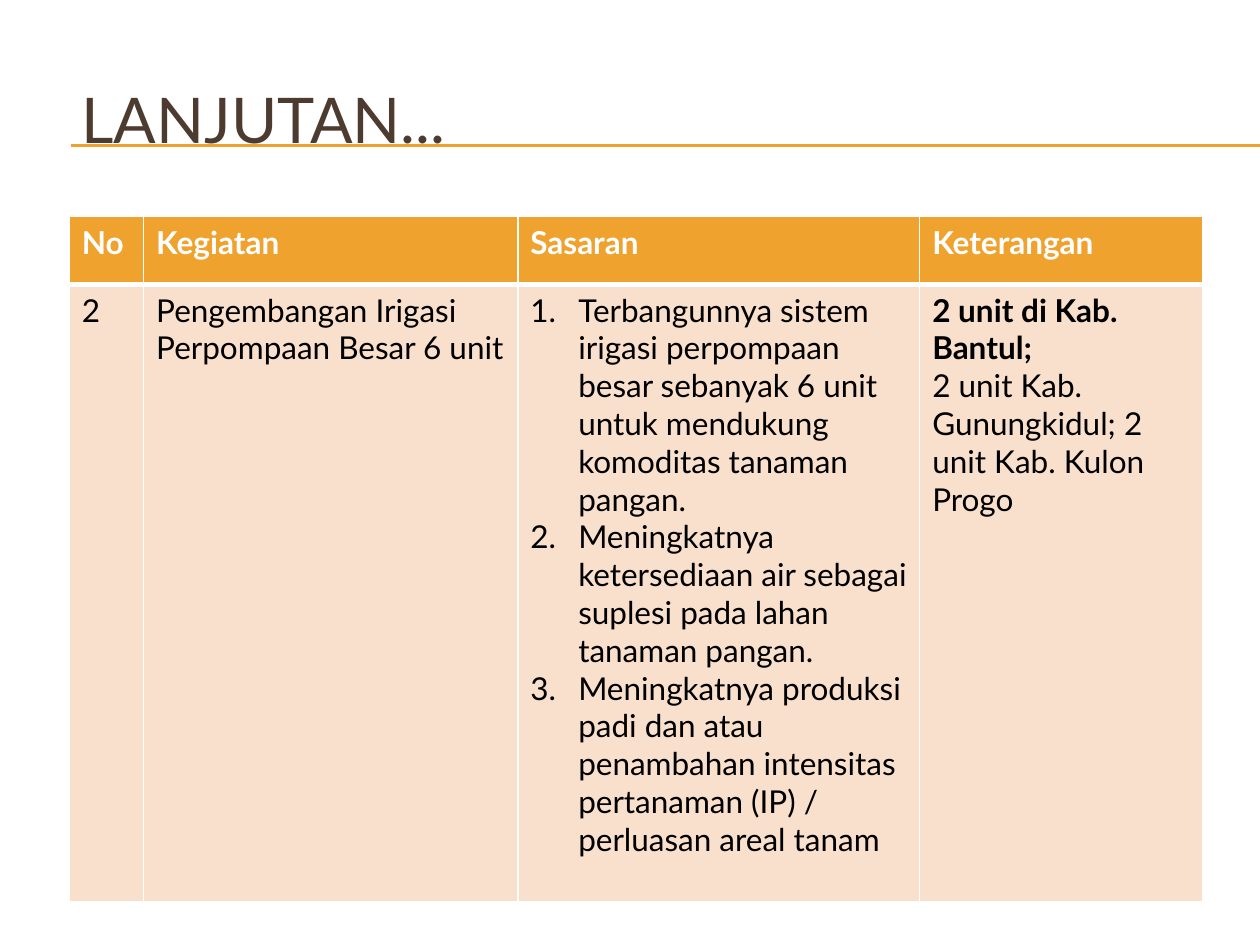
from lxml import etree
from pptx import Presentation
from pptx.dml.color import RGBColor
from pptx.enum.shapes import MSO_CONNECTOR
from pptx.enum.text import MSO_ANCHOR
from pptx.oxml.ns import qn
from pptx.util import Inches, Pt

STRAIGHT = MSO_CONNECTOR.STRAIGHT
MIDDLE = MSO_ANCHOR.MIDDLE

UNIT = Inches(0.01)
PAGE_COLUMNS, PAGE_ROWS = 1000, 750
COLORS = {"accent": "F0A22E", "title": "4E3B30", "band": "F9E0CD",
          "white": "FFFFFF", "black": "000000"}
FORMATS = {
    "title": {"size": Pt(36), "bold": False, "color": "title"},
    "header": {"size": Pt(18), "bold": True, "color": "white"},
    "body": {"size": Pt(18), "bold": False, "color": "black"},
    "strong": {"size": Pt(18), "bold": True, "color": "black"},
}
COLUMN_SPANS = (59, 297, 319, 225)
ROW_SPANS = (54, 490)
NUMBER_INDENT = Inches(0.38)
BORDERS = ("lnL", "lnR", "lnT", "lnB")

HEADERS = ("No", "Kegiatan", "Sasaran", "Keterangan")
TARGETS = (
    "Terbangunnya sistem irigasi perpompaan besar sebanyak 6 unit untuk mendukung komoditas tanaman pangan.",
    "Meningkatnya ketersediaan air sebagai suplesi pada lahan tanaman pangan.",
    "Meningkatnya produksi padi dan atau penambahan intensitas pertanaman (IP) / perluasan areal tanam",
)
TABLE_ROWS = (
    [[(header, "header")] for header in HEADERS],
    [
        [("2", "body")],
        [("Pengembangan Irigasi Perpompaan Besar 6 unit", "body")],
        [(target, "body") for target in TARGETS],
        [("2 unit di Kab. Bantul;", "strong"),
         ("2 unit Kab. Gunungkidul; 2 unit Kab. Kulon Progo", "body")],
    ],
)


def color(name):
    """Return the named colour of the palette."""
    return RGBColor.from_string(COLORS[name])


def place(box):
    """Turn grid columns and rows into slide lengths."""
    return [UNIT * value for value in box]


def write(frame, lines):
    """Write (text, format name) pairs as paragraphs."""
    for index, (text, style) in enumerate(lines):
        para = frame.add_paragraph() if index else frame.paragraphs[0]
        span = para.add_run()
        span.text = text
        span.font.name = "Lato"
        values = dict(FORMATS[style])
        span.font.color.rgb = color(values.pop("color"))
        for name, value in values.items():
            setattr(span.font, name, value)


def number(frame):
    """Number the paragraphs with a hanging indent."""
    for para in frame.paragraphs:
        properties = para._p.get_or_add_pPr()
        properties.set("marL", str(NUMBER_INDENT))
        properties.set("indent", str(-NUMBER_INDENT))
        etree.SubElement(properties, qn("a:buFont"), typeface="+mj-lt")
        etree.SubElement(properties, qn("a:buAutoNum"), type="arabicPeriod")


def outline(cell, bottom):
    """Give a cell white borders with its own bottom width."""
    properties = cell._tc.get_or_add_tcPr()
    for index, side in enumerate(BORDERS):
        width = Pt(bottom if side == "lnB" else 1)
        border = etree.Element(qn(f"a:{side}"), w=str(width))
        fill = etree.SubElement(border, qn("a:solidFill"))
        etree.SubElement(fill, qn("a:srgbClr"), val=COLORS["white"])
        properties.insert(index, border)


def add_rules(page, box):
    """Draw the pair of rules along the top and bottom of the box."""
    left, top, width, height = place(box)
    for level in (top, top + height):
        rule = page.shapes.add_connector(STRAIGHT, left, level, left + width, level)
        rule.line.color.rgb = color("accent")
        rule.line.width = Pt(0.75)
        etree.SubElement(rule._element.spPr, qn("a:effectLst"))


def add_title(page, box, text):
    """Place the slide title in the box."""
    frame = page.shapes.add_textbox(*place(box)).text_frame
    frame.word_wrap = True
    frame.vertical_anchor = MIDDLE
    write(frame, [(text, "title")])


def add_activity_table(page, box):
    """Fill the box with the table of activities."""
    table = page.shapes.add_table(len(ROW_SPANS), len(COLUMN_SPANS), *place(box)).table
    width, height = place(box)[2:]
    for column, share in zip(table.columns, COLUMN_SPANS):
        column.width = width * share // sum(COLUMN_SPANS)
    for row, share in zip(table.rows, ROW_SPANS):
        row.height = height * share // sum(ROW_SPANS)
    for row, contents in enumerate(TABLE_ROWS):
        for column, lines in enumerate(contents):
            cell = table.cell(row, column)
            cell.fill.solid()
            cell.fill.fore_color.rgb = color("band" if row else "accent")
            outline(cell, 1 if row else 3)
            if row:
                properties = cell._tc.tcPr
                properties.find(qn("a:lnT")).set("w", str(Pt(3)))
            write(cell.text_frame, lines)
    number(table.cell(1, HEADERS.index("Sasaran")).text_frame)


def main():
    """Build the slide and save the deck."""
    deck = Presentation()
    deck.slide_width, deck.slide_height = place((PAGE_COLUMNS, PAGE_ROWS))
    page = deck.slides.add_slide(deck.slide_layouts[6])
    add_rules(page, (56, 115, PAGE_COLUMNS - 56, 1))
    add_title(page, (55, 31, 900, 125), "LANJUTAN...")
    add_activity_table(page, (55, 172, sum(COLUMN_SPANS), sum(ROW_SPANS)))
    deck.save("out.pptx")


if __name__ == "__main__":
    main()
